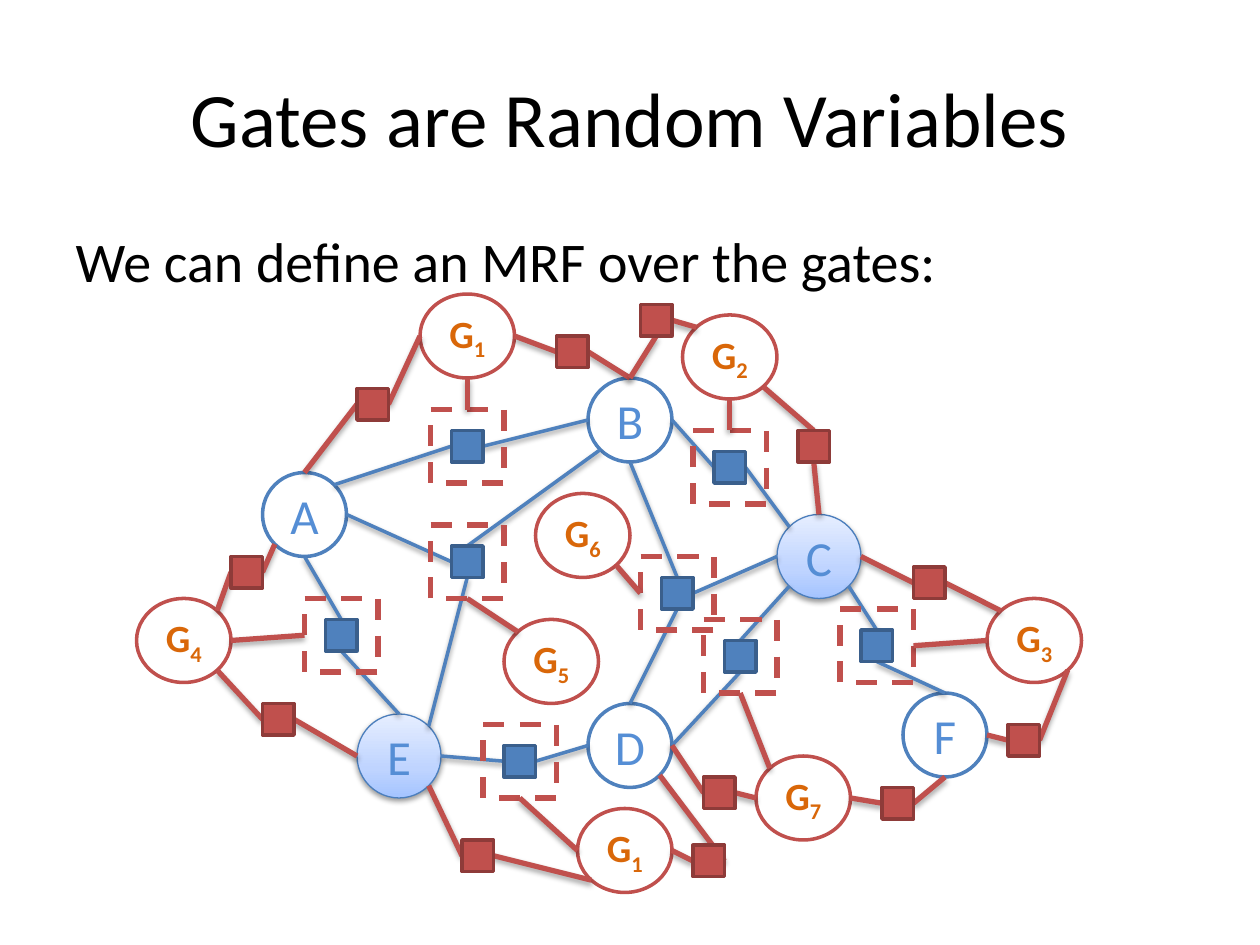
import copy

import pptx
import pptx.dml.color
import pptx.enum.dml
import pptx.enum.shapes
import pptx.enum.text
import pptx.oxml
import pptx.oxml.ns
import pptx.util

Inches, Pt = pptx.util.Inches, pptx.util.Pt
SHAPE = pptx.enum.shapes.MSO_SHAPE
qn = pptx.oxml.ns.qn

COLORS = {
    "black": "000000", "white": "FFFFFF",
    "blue": "4F81BD", "blue edge": "3A5F8C", "label": "558ED5",
    "red": "C0504D", "red edge": "8E3B39", "gate label": "D96709",
    "observed edge": "4B7EBC",
    "shade bottom": "A4C4FF", "shade middle": "BFD4FF", "shade top": "E6EEFF",
}
FONT = "Calibri"

# The graph lies on a grid of twelfths of an inch.
NODES = {"A": (25, 45), "C": (74, 49), "E": (34, 68),
         "D": (56, 67), "B": (56, 36), "F": (86, 66)}
OBSERVED = "CE"

# Factor: place and links, each "own side, target, target side"
FACTORS = {
    "AB": (43, 41, ["w A ne", "e B w"]),
    "BCD": (63, 55, ["n B s", "e C w", "s D n"]),
    "BC": (68, 43, ["w B e", "e C nw"]),
    "AE": (31, 59, ["n A s", "s E n"]),
    "DE": (48, 71, ["w E e", "e D w"]),
    "CD": (69, 61, ["n C sw", "s D e"]),
    "ABE": (43, 52, ["w A e", "n B sw", "s E ne"]),
    "CF": (82, 60, ["n C se", "s F n"]),
}

# Gate, keyed by its factor: index, place, gate side, frame side
GATES = {
    "CD": ("7", 72, 72, "nw", "s"),
    "BC": ("2", 65, 30, "s", "n"),
    "CF": ("3", 94, 57, "w", "e"),
    "AE": ("4", 13, 57, "e", "w"),
    "ABE": ("5", 48, 59, "nw", "s"),
    "BCD": ("6", 51, 47, "se", "w"),
    "AB": ("1", 40, 28, "s", "n"),
    "DE": ("1", 55, 77, "w", "s"),
}

# Factors between gates and nodes; a gate is named by the factor it controls
GATE_FACTORS = [
    (34, 37, ["e AB w", "w A n"]),
    (53, 32, ["e B n", "w AB e"]),
    (22, 53, ["e A sw", "w AE ne"]),
    (25, 67, ["e E w", "w AE se"]),
    (76, 41, ["s C n", "n BC se"]),
    (61, 29, ["e BC nw", "s B n"]),
    (87, 54, ["e CF nw", "w C e"]),
    (84, 75, ["e F s", "w CD e"]),
    (96, 69, ["e CF se", "w F e"]),
    (44, 80, ["e DE sw", "w E se"]),
    (66, 80.5, ["e D se", "w DE e"]),
    (67, 74, ["e CD w", "w D e"]),
]


def grid(units):
    return Inches(units / 12)


def rgb(name):
    return pptx.dml.color.RGBColor.from_string(COLORS[name])


def site(bounds, side):
    """Point on the outline of an ellipse, or mid-side of a square."""
    left, top, width, height = bounds
    reach = 0.5 if len(side) == 1 else 0.3536
    across = ("e" in side) - ("w" in side)
    down = ("s" in side) - ("n" in side)
    return (left + width * (0.5 + reach * across),
            top + height * (0.5 + reach * down))


class Sketch:
    def __init__(self, page):
        self.page = page

    def style(self, span, size, color, bold=False):
        span.font.name, span.font.size, span.font.bold = FONT, Pt(size), bold
        span.font.color.rgb = rgb(color)

    def placeholder(self, index, bounds, text, size):
        box = self.page.placeholders[index]
        box.left, box.top, box.width, box.height = map(Inches, bounds)
        box.text_frame.text = text
        para = box.text_frame.paragraphs[0]
        self.style(para.runs[0], size, "black")
        return para

    def shadow(self, properties, alpha, distance):
        effects = properties.find(qn("a:effectLst"))
        if effects is not None:
            properties.remove(effects)
        properties.append(pptx.oxml.parse_xml(
            '<a:effectLst xmlns:a="http://schemas.openxmlformats.org/drawingml/2006/main">'
            f'<a:outerShdw blurRad="{Pt(3.1)}" dist="{Pt(distance)}" dir="5400000" rotWithShape="0">'
            f'<a:srgbClr val="{COLORS["black"]}"><a:alpha val="{alpha * 1000}"/></a:srgbClr>'
            '</a:outerShdw></a:effectLst>'))

    def shape(self, kind, bounds, fill, edge, width=2):
        box = self.page.shapes.add_shape(kind, *map(grid, bounds))
        box.shadow.inherit = False
        if fill:
            box.fill.solid()
            box.fill.fore_color.rgb = rgb(fill)
        else:
            box.fill.background()
        box.line.color.rgb, box.line.width = rgb(edge), Pt(width)
        return box

    def label(self, box, text, size, color, bold=False, index=""):
        frame = box.text_frame
        frame.word_wrap = False
        frame.vertical_anchor = pptx.enum.text.MSO_ANCHOR.MIDDLE
        frame.text = text
        para = frame.paragraphs[0]
        para.alignment = pptx.enum.text.PP_ALIGN.CENTER
        if index:
            span = para.add_run()
            span.text = index
            span.font._element.set("baseline", "-25000")
        for span in para.runs:
            self.style(span, size, color, bold)

    def node(self, name, bounds):
        observed = name in OBSERVED
        box = self.shape(SHAPE.OVAL, bounds, "white",
                         "observed edge" if observed else "blue", 0.75 if observed else 2)
        if observed:
            self.shade(box)
        self.label(box, name, 28, "label")

    def shade(self, box):
        box.fill.gradient()
        box.fill.gradient_angle = 90
        stops = box._element.spPr.find(qn("a:gradFill")).find(qn("a:gsLst"))
        stops.append(copy.deepcopy(stops[-1]))
        shades = (("shade bottom", 0), ("shade middle", 0.35), ("shade top", 1))
        for stop, (color, position) in zip(box.fill.gradient_stops, shades):
            stop.color.rgb, stop.position = rgb(color), position
        self.shadow(box._element.spPr, 38, 1.6)

    def gate(self, index, bounds):
        box = self.shape(SHAPE.OVAL, bounds, "white", "red")
        self.label(box, "G", 22, "gate label", bold=True, index=index)

    def frame(self, bounds):
        box = self.shape(SHAPE.RECTANGLE, bounds, None, "red", 3)
        box.line.dash_style = pptx.enum.dml.MSO_LINE.DASH

    def link(self, start, end, color):
        line = self.page.shapes.add_connector(
            pptx.enum.shapes.MSO_CONNECTOR.STRAIGHT, *map(grid, start + end))
        blue = color == "blue"
        line.line.color.rgb, line.line.width = rgb(color), Pt(2 if blue else 3)
        self.shadow(line._element.spPr, *((38, 1.6) if blue else (35, 1.8)))

    def factor(self, left, top, links, places, color):
        bounds = (left, top, 3, 3)
        for entry in links:
            side, target, target_side = entry.split()
            self.link(site(bounds, side), site(places[target], target_side), color)
        self.shape(SHAPE.RECTANGLE, bounds, color, color + " edge")


def main():
    deck = pptx.Presentation()
    deck.slide_width, deck.slide_height = Inches(10), Inches(7.5)
    sketch = Sketch(deck.slides.add_slide(deck.slide_layouts[1]))

    # Title and body
    sketch.placeholder(0, (0.5, 0.3, 9, 1.25), "Gates are Random Variables", 44)
    para = sketch.placeholder(1, (0.5, 1.75, 9, 4.95),
                              "We can define an MRF over the gates:", 32)
    properties = para._p.get_or_add_pPr()
    properties.append(properties.makeelement(qn("a:buNone"), {}))

    # Variables and their factors
    places = {name: (*corner, 8, 8) for name, corner in NODES.items()}
    for name, bounds in places.items():
        sketch.node(name, bounds)
    for left, top, links in FACTORS.values():
        sketch.factor(left, top, links, places, "blue")

    # Gates, each with a dashed frame round its factor
    for name, (index, left, top, side, frame_side) in GATES.items():
        places[name] = (left, top, 9, 8)
        factor_left, factor_top, _ = FACTORS[name]
        frame = (factor_left - 2, factor_top - 2, 7, 7)
        sketch.frame(frame)
        sketch.gate(index, places[name])
        sketch.link(site(places[name], side), site(frame, frame_side), "red")

    # Factors of the field over the gates
    for left, top, links in GATE_FACTORS:
        sketch.factor(left, top, links, places, "red")

    deck.save("out.pptx")


if __name__ == "__main__":
    main()
